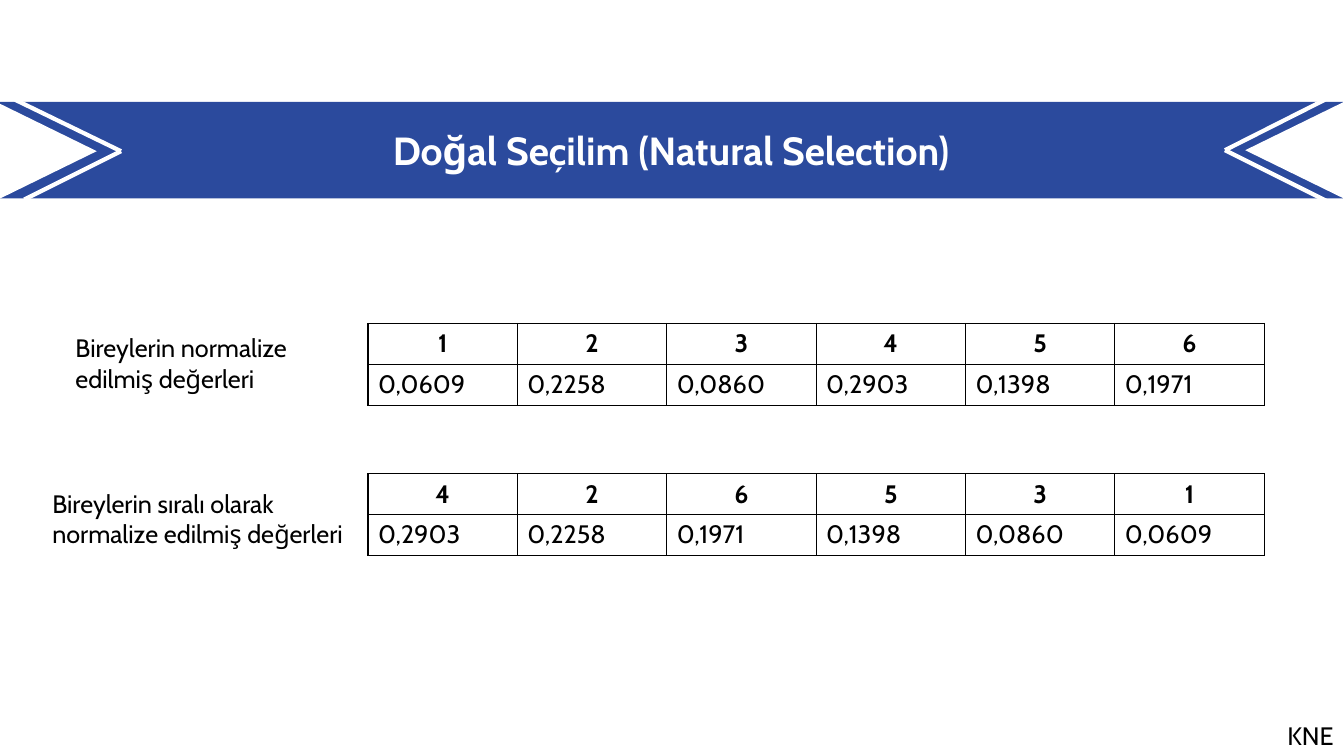
from dataclasses import dataclass

from lxml import etree
from pptx import Presentation
from pptx.dml.color import RGBColor
from pptx.enum.shapes import MSO_CONNECTOR, MSO_SHAPE
from pptx.enum.text import MSO_ANCHOR, MSO_AUTO_SIZE, PP_ALIGN
from pptx.oxml.ns import qn
from pptx.util import Emu, Pt

RECTANGLE, TRIANGLE = MSO_SHAPE.RECTANGLE, MSO_SHAPE.ISOSCELES_TRIANGLE
STRAIGHT = MSO_CONNECTOR.STRAIGHT
LEFT, CENTER = PP_ALIGN.LEFT, PP_ALIGN.CENTER
MIDDLE = MSO_ANCHOR.MIDDLE
GROW = MSO_AUTO_SIZE.SHAPE_TO_FIT_TEXT
BORDER_TAGS = ("a:lnL", "a:lnR", "a:lnT", "a:lnB")
EMU_PER_PX = 9144  # 100 px to the inch


@dataclass(frozen=True)
class Theme:
    font: str = "Cabin"
    ribbon: str = "2B4A9D"
    paper: str = "FFFFFF"
    ink: str = "000000"
    title_size: int = 28
    body_size: int = 18
    stripe_width: int = 3
    border_width: int = 1


THEME = Theme()
INDIVIDUALS = [("1", "0,0609"), ("2", "0,2258"), ("3", "0,0860"),
               ("4", "0,2903"), ("5", "0,1398"), ("6", "0,1971")]
RANKED = sorted(INDIVIDUALS, key=lambda individual: individual[1], reverse=True)


def px(*lengths):
    return [Emu(length * EMU_PER_PX) for length in lengths]


def write(frame, text, size=THEME.body_size, color=THEME.ink, bold=False, align=LEFT):
    paragraph = frame.paragraphs[0]
    paragraph.alignment = align
    run = paragraph.add_run()
    run.text = text
    run.font.name = THEME.font
    run.font.size = Pt(size)
    run.font.bold = bold
    run.font.color.rgb = RGBColor.from_string(color)


def add_label(slide, box, text, wrap=True):
    frame = slide.shapes.add_textbox(*px(*box)).text_frame
    frame.word_wrap = wrap
    frame.auto_size = GROW
    write(frame, text)


def add_plain_shape(slide, kind, box, color):
    shape = slide.shapes.add_shape(kind, *px(*box))
    shape.shadow.inherit = False
    shape.fill.solid()
    shape.fill.fore_color.rgb = RGBColor.from_string(color)
    shape.line.fill.background()
    return shape


def add_stripe(slide, start, end):
    stripe = slide.shapes.add_connector(STRAIGHT, *px(*start, *end))
    stripe.line.color.rgb = RGBColor.from_string(THEME.paper)
    stripe.line.width = Pt(THEME.stripe_width)
    etree.SubElement(stripe._element.spPr, qn("a:effectLst"))


def add_notch(slide, box, rotation, tip, ends):
    """White triangle cut into the ribbon, with two stripes meeting at its tip."""
    add_plain_shape(slide, TRIANGLE, box, THEME.paper).rotation = rotation
    left, top = box[:2]
    for dx, dy in ends:
        add_stripe(slide, (left + dx, top + dy), (left + tip[0], top + tip[1]))


def add_ribbon(slide, box, title):
    left, top, width, height = box
    band = add_plain_shape(slide, RECTANGLE, box, THEME.ribbon)
    band.text_frame.vertical_anchor = MIDDLE
    write(band.text_frame, title, size=THEME.title_size, color=THEME.paper,
          bold=True, align=CENTER)
    # Notches at both ends
    add_notch(slide, (left, top, 96, 98), 90, (121, 49), [(16, -2), (25, 97)])
    add_notch(slide, (left + width - 96, top - 1, 96, 98), 270, (-21, 49),
              [(78, -1), (81, 100)])


def style_cell(cell):
    properties = cell._tc.get_or_add_tcPr()
    for tag in BORDER_TAGS:
        border = etree.SubElement(properties, qn(tag), w=str(Pt(THEME.border_width)))
        fill = etree.SubElement(border, qn("a:solidFill"))
        etree.SubElement(fill, qn("a:srgbClr"), val=THEME.ink)
    cell.fill.background()


def add_value_table(slide, box, individuals):
    width, height = box[2:]
    table = slide.shapes.add_table(2, len(individuals), *px(*box)).table
    table.first_row = table.horz_banding = False
    for column in table.columns:
        column.width = Emu(width * EMU_PER_PX // len(individuals))
    for row in table.rows:
        row.height = Emu(height * EMU_PER_PX // 2)
    for column_index, individual in enumerate(individuals):
        for row_index, text in enumerate(individual):
            cell = table.cell(row_index, column_index)
            style_cell(cell)
            is_heading = row_index == 0
            write(cell.text_frame, text, bold=is_heading,
                  align=CENTER if is_heading else LEFT)


def build_selection_slide(slide, width, height):
    # Page mark and title ribbon
    add_label(slide, (width - 66, height - 40, 66, 40), "KNE", wrap=False)
    add_ribbon(slide, (-1, 101, width, 96), "Doğal Seçilim (Natural Selection)")
    # Values in order of individual, then ranked by value
    sections = [
        (321, (65, 325, 241, 71), "Bireylerin normalize edilmiş değerleri", INDIVIDUALS),
        (470, (42, 479, 319, 71),
         "Bireylerin sıralı olarak normalize edilmiş değerleri", RANKED),
    ]
    for top, label_box, label, individuals in sections:
        add_value_table(slide, (365, top, 889, 81), individuals)
        add_label(slide, label_box, label)


def main():
    width, height = 1333, 750
    deck = Presentation()
    deck.slide_width, deck.slide_height = px(width, height)
    slide = deck.slides.add_slide(deck.slide_layouts[6])
    build_selection_slide(slide, width, height)
    deck.save("out.pptx")


if __name__ == "__main__":
    main()
